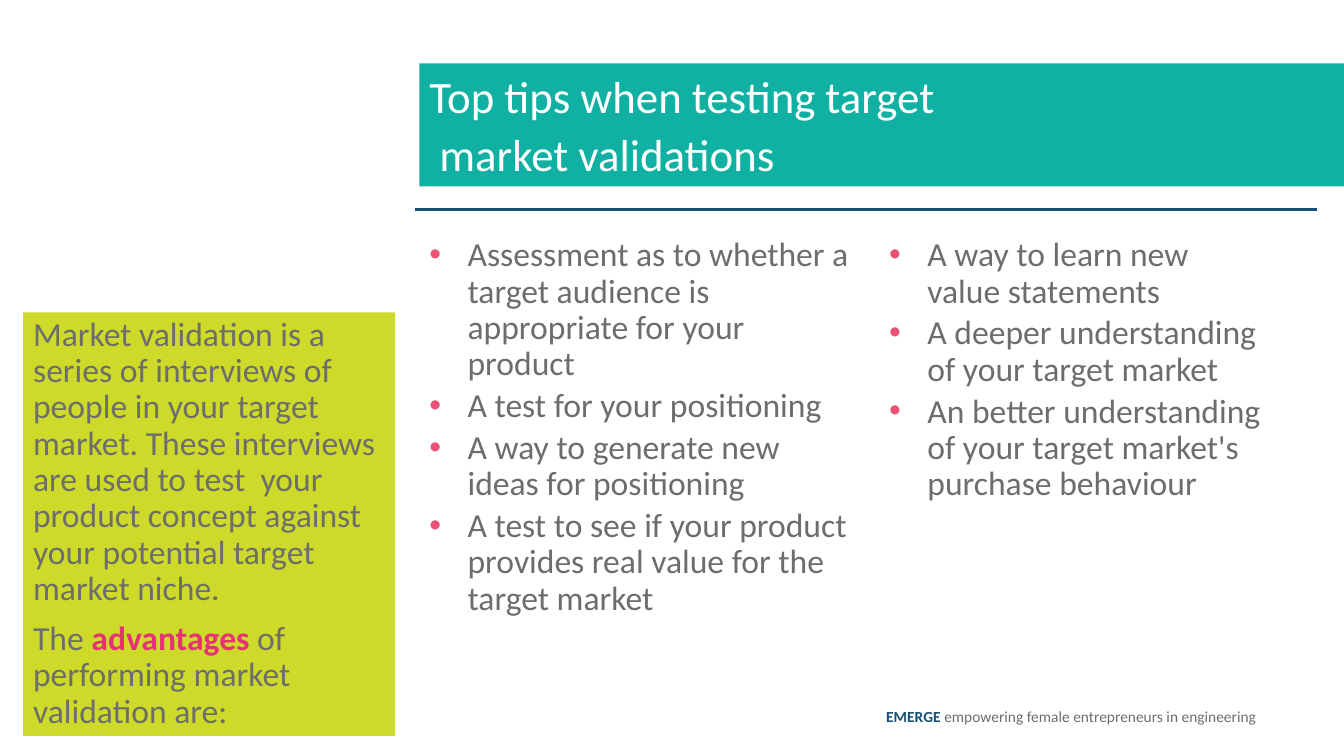
"""Build a slide with tips for testing target market validations."""
from lxml import etree
from pptx import Presentation
from pptx.dml.color import RGBColor
from pptx.enum.shapes import MSO_CONNECTOR, MSO_SHAPE
from pptx.enum.text import MSO_ANCHOR, PP_ALIGN
from pptx.oxml.ns import qn
from pptx.util import Inches, Pt

RECTANGLE = MSO_SHAPE.RECTANGLE
STRAIGHT = MSO_CONNECTOR.STRAIGHT
TOP = MSO_ANCHOR.TOP
LEFT, RIGHT = PP_ALIGN.LEFT, PP_ALIGN.RIGHT

COLORS = {
    "navy": "174F72",
    "grey": "6D6E6C",
    "coral": "E95273",
    "pink": "E63275",
    "lime": "CEDA29",
    "teal": "10B1A2",
    "white": "FFFFFF",
}
PAGE_WIDTH, PAGE_HEIGHT = 13.33, 7.5
CONTENT_LEFT = 4.16
COLUMN_TOP = 2.31
BULLET_INDENT = 0.38

FOOTER = [[("EMERGE ", "navy", True),
           ("empowering female entrepreneurs in engineering", "grey", False)]]
TITLE = ["Top tips when testing target", " market validations"]
INTRO = [
    [("Market validation is a series of interviews of people in your target "
      "market. These interviews are used to test  your product concept against "
      "your potential target market niche.", "grey", False)],
    [("The ", "grey", False),
     ("advantages", "pink", True),
     (" of performing market validation are:", "grey", False)],
]
COLUMNS = [
    (CONTENT_LEFT, 4.4, [
        "Assessment as to whether a target audience is appropriate for your product",
        "A test for your positioning",
        "A way to generate new ideas for positioning",
        "A test to see if your product provides real value for the target market",
    ]),
    (8.72, 3.94, [
        "A way to learn new value statements",
        "A deeper understanding of your target market",
        "An better understanding of your target market's purchase behaviour",
    ]),
]


def plain(lines, color):
    return [[(line, color, False)] for line in lines]


class SlideBuilder:
    def __init__(self, page, font="Calibri"):
        self.page = page
        self.font = font

    def color(self, name):
        return RGBColor.from_string(COLORS[name])

    def fill_text(self, box, paragraphs, size, spacing=1.0, before=0,
                  align=LEFT, bullets=False):
        frame = box.text_frame
        frame.word_wrap = True
        frame.vertical_anchor = TOP
        for index, spans in enumerate(paragraphs):
            para = frame.add_paragraph() if index else frame.paragraphs[0]
            para.alignment = align
            para.line_spacing = spacing
            para.space_before = Pt(before if index else 0)
            if bullets:
                self.bullet(para)
            for text, color, bold in spans:
                span = para.add_run()
                span.text = text
                span.font.name = self.font
                span.font.size = Pt(size)
                span.font.bold = bold
                span.font.color.rgb = self.color(color)

    def bullet(self, para):
        properties = para._p.get_or_add_pPr()
        properties.set("marL", str(Inches(BULLET_INDENT)))
        properties.set("indent", str(-Inches(BULLET_INDENT)))
        tint = etree.SubElement(properties, qn("a:buClr"))
        etree.SubElement(tint, qn("a:srgbClr"), val=COLORS["coral"])
        etree.SubElement(properties, qn("a:buFont"), typeface="Arial")
        etree.SubElement(properties, qn("a:buChar"), char="•")

    def text(self, area, paragraphs, size, **style):
        box = self.page.shapes.add_textbox(*map(Inches, area))
        self.fill_text(box, paragraphs, size, **style)

    def panel(self, area, fill, paragraphs, size, **style):
        box = self.page.shapes.add_shape(RECTANGLE, *map(Inches, area))
        box.shadow.inherit = False
        box.fill.solid()
        box.fill.fore_color.rgb = self.color(fill)
        box.line.fill.background()
        self.fill_text(box, paragraphs, size, **style)

    def rule(self, start, end, color, width):
        line = self.page.shapes.add_connector(
            STRAIGHT, *map(Inches, (*start, *end)))
        line.line.color.rgb = self.color(color)
        line.line.width = Pt(width)
        etree.SubElement(line._element.spPr, qn("a:effectLst"))


def main():
    deck = Presentation()
    deck.slide_width = Inches(PAGE_WIDTH)
    deck.slide_height = Inches(PAGE_HEIGHT)
    builder = SlideBuilder(deck.slides.add_slide(deck.slide_layouts[6]))

    builder.text((0.31, 6.97, 12.25, 0.45), FOOTER, 11, align=RIGHT)
    builder.rule((4.12, 2.08), (13.06, 2.08), "navy", 2.25)
    for left, width, tips in COLUMNS:
        builder.text((left, COLUMN_TOP, width, 4.34), plain(tips, "grey"), 24,
                     spacing=0.9, before=4, bullets=True)
    builder.panel((0.23, 3.1, 3.69, 4.2), "lime", INTRO, 24,
                  spacing=0.9, before=10)
    builder.panel((CONTENT_LEFT, 0.63, PAGE_WIDTH - CONTENT_LEFT, 1.22), "teal",
                  plain(TITLE, "white"), 32, before=3)

    deck.save("out.pptx")


if __name__ == "__main__":
    main()
